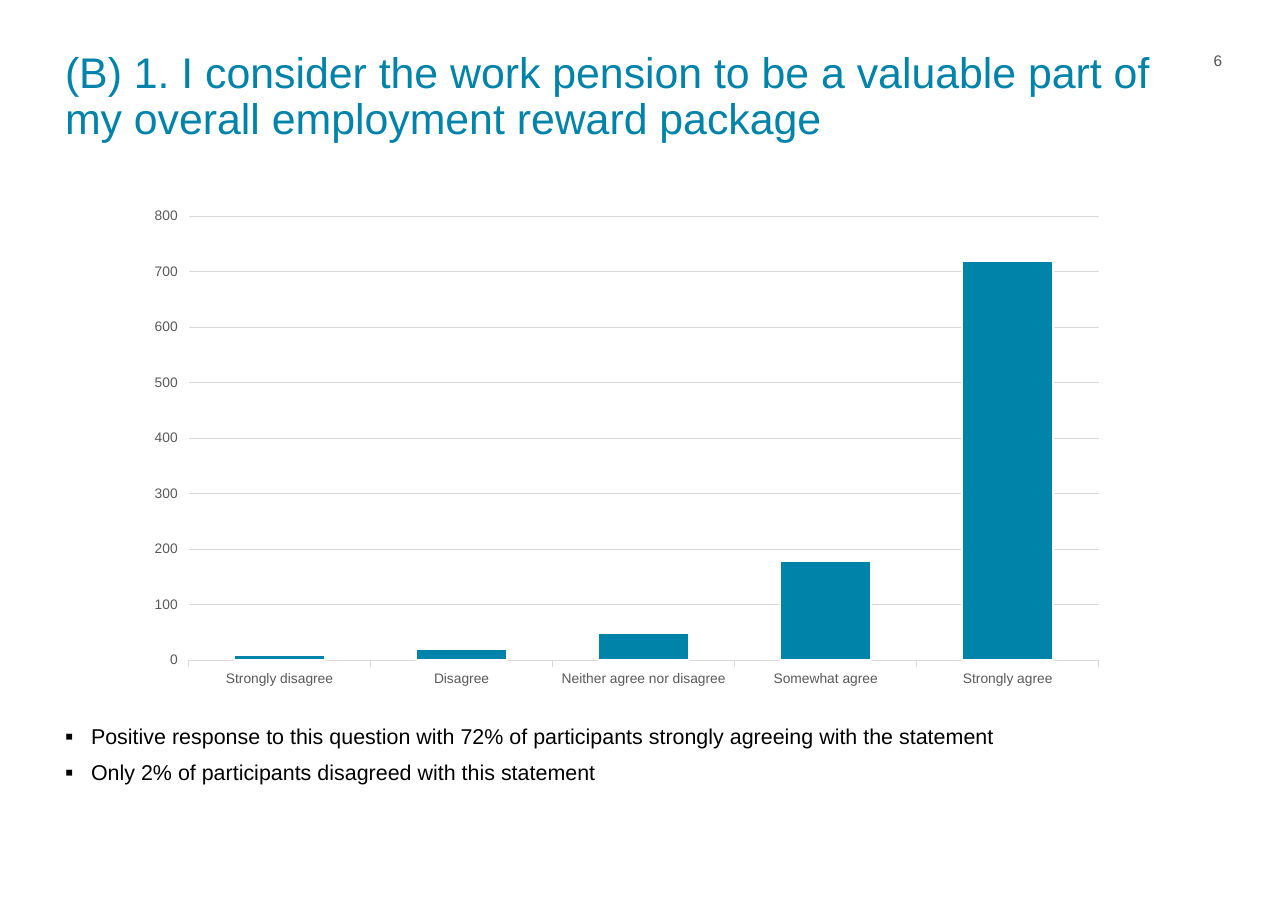
import pptx
import pptx.chart.data
import pptx.dml.color
import pptx.enum.chart
import pptx.enum.text
import pptx.oxml
import pptx.oxml.ns
import pptx.util
from pptx.util import Cm, Pt

TITLE = ("(B) 1. I consider the work pension to be a valuable part of "
         "my overall employment reward package")
PAGE_NUMBER = "6"
FINDINGS = [
    "Positive response to this question with 72% of participants strongly agreeing with the statement",
    "Only 2% of participants disagreed with this statement",
]
RESPONSES = {
    "Strongly disagree": 10,
    "Disagree": 20,
    "Neither agree nor disagree": 50,
    "Somewhat agree": 180,
    "Strongly agree": 720,
}
PLOT_AREA = {"x": 0.041, "y": 0.034, "w": 0.937, "h": 0.898}

FONT = "Arial"
TEAL, BLACK, WHITE = "0083A9", "000000", "FFFFFF"
PAGE_GREY, LABEL_GREY, LINE_GREY = "4D4F53", "595959", "D9D9D9"
LEFT = 1.5
INDENT = 0.6


def rgb(color):
    return pptx.dml.color.RGBColor.from_string(color)


def set_font(font, size, color):
    font.name = FONT
    font.size = Pt(size)
    font.color.rgb = rgb(color)


def set_line(line, color, width):
    line.color.rgb = rgb(color)
    line.width = Pt(width)


def add_bullet(paragraph):
    properties = paragraph._p.get_or_add_pPr()
    properties.set("marL", str(Cm(INDENT)))
    properties.set("indent", str(-Cm(INDENT)))
    namespace = pptx.oxml.ns.nsdecls("a")
    for element in (
        f'<a:buClr {namespace}><a:srgbClr val="{BLACK}"/></a:buClr>',
        f'<a:buSzPct {namespace} val="110000"/>',
        f'<a:buFont {namespace} typeface="{FONT}"/>',
        f'<a:buChar {namespace} char="▪"/>',
    ):
        properties.append(pptx.oxml.parse_xml(element))


def add_text(slide, lines, box, size, color, spacing=0.9, gap=0, align="LEFT", bullets=False):
    frame = slide.shapes.add_textbox(*map(Cm, box)).text_frame
    frame.word_wrap = True
    frame.margin_left = frame.margin_right = frame.margin_top = frame.margin_bottom = 0
    for index, line in enumerate(lines):
        paragraph = frame.add_paragraph() if index else frame.paragraphs[0]
        if bullets:
            add_bullet(paragraph)
        paragraph.alignment = getattr(pptx.enum.text.PP_ALIGN, align)
        paragraph.line_spacing = spacing
        paragraph.space_before = Pt(gap if index else 0)
        run = paragraph.add_run()
        run.text = line
        set_font(run.font, size, color)


def fix_plot_area(chart):
    """Pin the inner plot area to fixed fractions of the chart."""
    modes = '<c:xMode val="edge"/><c:yMode val="edge"/>'
    sizes = "".join(f'<c:{key} val="{value}"/>' for key, value in PLOT_AREA.items())
    layout = pptx.oxml.parse_xml(
        f'<c:layout {pptx.oxml.ns.nsdecls("c")}><c:manualLayout>'
        f'<c:layoutTarget val="inner"/>{modes}{sizes}</c:manualLayout></c:layout>')
    plot_area = chart._chartSpace.chart.plotArea
    for old_layout in plot_area.findall(pptx.oxml.ns.qn("c:layout")):
        plot_area.remove(old_layout)
    plot_area.insert(0, layout)


def add_response_chart(slide, box):
    data = pptx.chart.data.CategoryChartData()
    data.categories = list(RESPONSES)
    data.add_series("Responses", list(RESPONSES.values()))
    chart = slide.shapes.add_chart(
        pptx.enum.chart.XL_CHART_TYPE.COLUMN_CLUSTERED, *map(Cm, box), data).chart
    chart.has_legend = False
    chart.has_title = False
    set_font(chart.font, 10, BLACK)
    fix_plot_area(chart)

    plot = chart.plots[0]
    plot.gap_width = 100
    plot.vary_by_categories = False
    series = plot.series[0]
    series.format.fill.solid()
    series.format.fill.fore_color.rgb = rgb(TEAL)
    set_line(series.format.line, WHITE, 1.5)

    for axis in (chart.category_axis, chart.value_axis):
        axis.major_tick_mark = pptx.enum.chart.XL_TICK_MARK.OUTSIDE
        set_font(axis.tick_labels.font, 9, LABEL_GREY)
    set_line(chart.category_axis.format.line, LINE_GREY, 0.75)

    value_axis = chart.value_axis
    value_axis.minimum_scale, value_axis.maximum_scale = 0, 800
    value_axis.major_unit = 100
    value_axis.format.line.fill.background()
    value_axis.has_major_gridlines = True
    set_line(value_axis.major_gridlines.format.line, LINE_GREY, 0.75)


def main():
    presentation = pptx.Presentation()
    presentation.slide_width, presentation.slide_height = Cm(29.7), Cm(21)
    slide = presentation.slides.add_slide(presentation.slide_layouts[6])
    add_text(slide, FINDINGS, (LEFT, 16.64, 26.7, 7.16 - 3), 14, BLACK,
             spacing=1.05, gap=6, bullets=True)
    add_response_chart(slide, (3.43, 4.6, 22.4, 11.4))
    add_text(slide, [TITLE], (LEFT, 1.19, 25.5, 2.11), 28, TEAL)
    add_text(slide, [PAGE_NUMBER], (27.18, 1.22, 1, 0.5), 10, PAGE_GREY, align="RIGHT")
    presentation.save("out.pptx")


if __name__ == "__main__":
    main()
